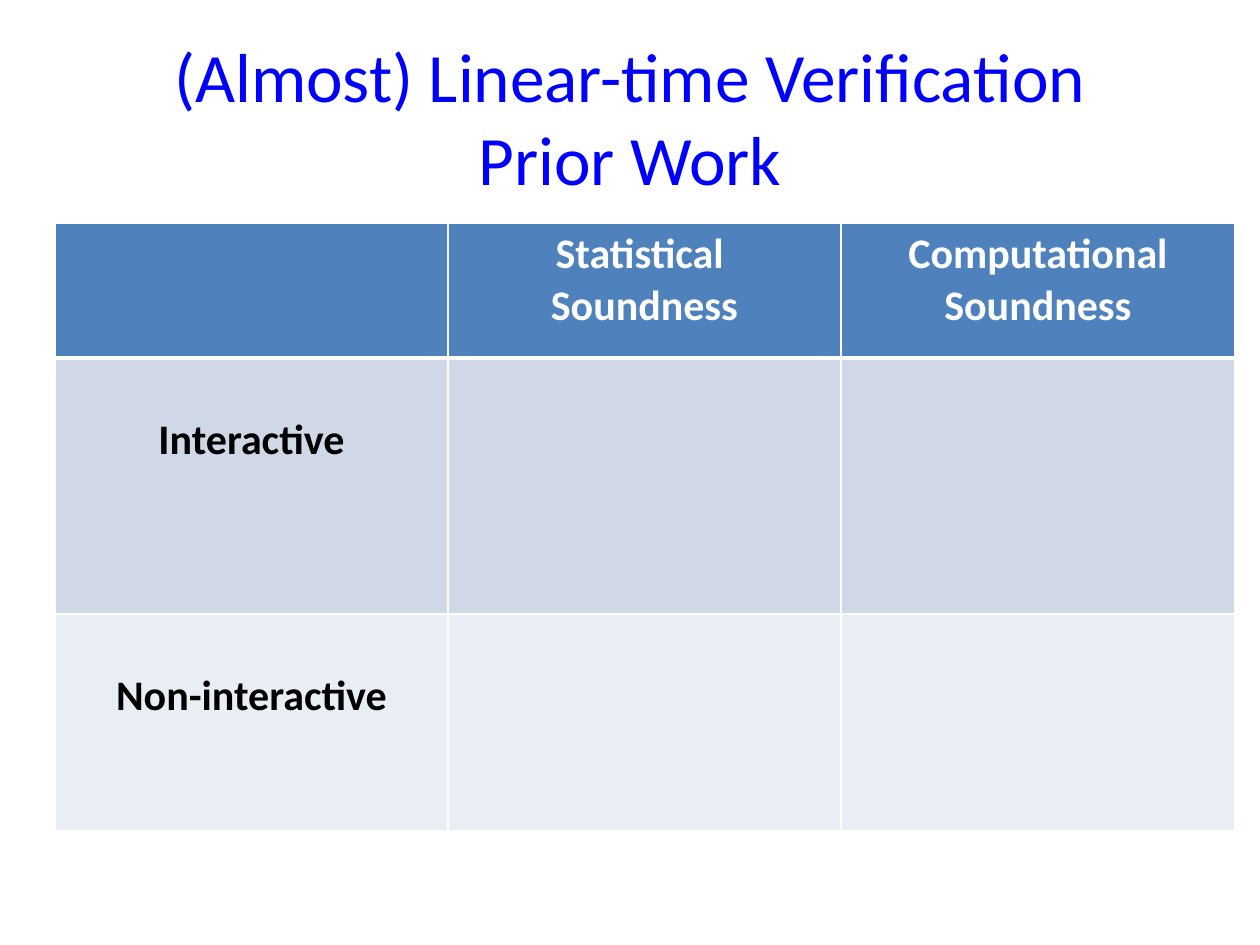
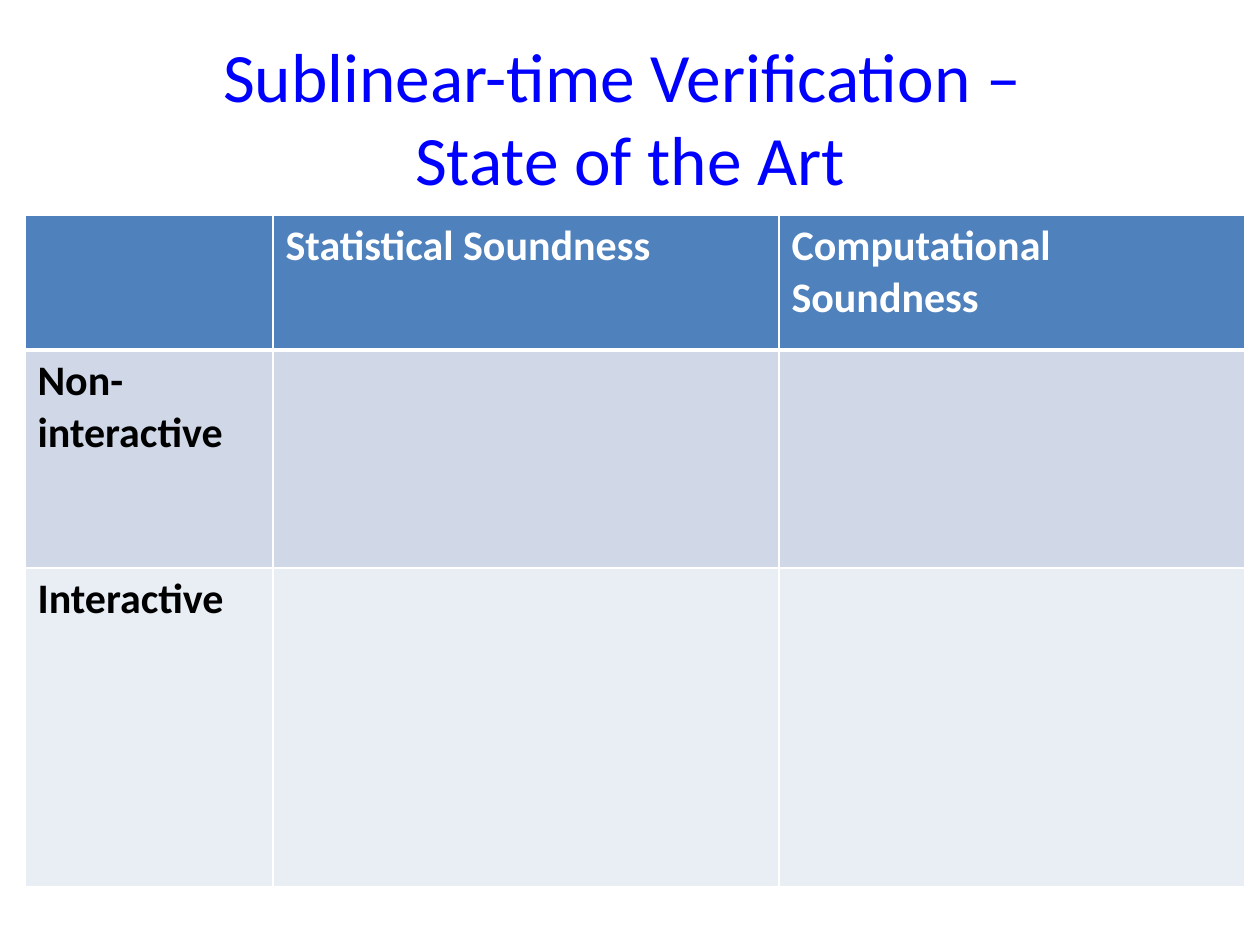
"""Build two slides that set verification settings out in soundness tables."""
from dataclasses import dataclass

from lxml import etree
from pptx import Presentation
from pptx.dml.color import RGBColor
from pptx.enum.text import MSO_ANCHOR, MSO_AUTO_SIZE, PP_ALIGN
from pptx.oxml.ns import qn
from pptx.util import Emu, Pt

CENTER, LEFT = PP_ALIGN.CENTER, PP_ALIGN.LEFT
MIDDLE = MSO_ANCHOR.MIDDLE
NO_AUTOFIT = MSO_AUTO_SIZE.NONE

PX_PER_INCH = 126
FONT = "Calibri"
TITLE_ONLY = 5
TITLE_BOX = (63, 38, 1134, 157)
CELL_MARGIN = 6
THIN, THICK = 1, 3
COLORS = {
    "title": "0000FF",
    "header": "4F81BD",
    "odd_row": "D0D8E8",
    "even_row": "E9EDF4",
    "border": "FFFFFF",
    "header_text": "FFFFFF",
    "label_text": "000000",
}
ROW_FILLS = ("header", "odd_row", "even_row")


@dataclass(frozen=True)
class SoundnessTable:
    """One slide: its title and the table of settings below it."""

    title: str
    left: int
    top: int
    columns: tuple[int, ...]
    rows: tuple[int, ...]
    headers: tuple[str, ...]
    labels: tuple[str, ...]
    align: PP_ALIGN
    label_margin: int = CELL_MARGIN


PAGES = (
    SoundnessTable(
        title="(Almost) Linear-time Verification\vPrior Work",
        left=55,
        top=223,
        columns=(393, 393, 394),
        rows=(135, 256, 217),
        headers=("Statistical \nSoundness", "Computational Soundness"),
        labels=("Interactive", "Non-interactive"),
        align=CENTER,
        label_margin=57,
    ),
    SoundnessTable(
        title="Sublinear-time Verification – \vState of the Art",
        left=25,
        top=215,
        columns=(248, 506, 466),
        rows=(135, 218, 319),
        headers=("Statistical Soundness", "Computational Soundness"),
        labels=("Non-interactive", "Interactive"),
        align=LEFT,
    ),
)


def px(length: int) -> Emu:
    """Turn a length in px into EMU."""
    return Emu(round(length * 914400 / PX_PER_INCH))


def color(name: str) -> RGBColor:
    """Look up a named colour."""
    return RGBColor.from_string(COLORS[name])


def style_text(frame, size: float, color_name: str, align: PP_ALIGN, bold: bool) -> None:
    """Set font and alignment on every paragraph of a text frame."""
    for para in frame.paragraphs:
        para.alignment = align
        para.font.name = FONT
        para.font.size = Pt(size)
        para.font.bold = bold
        para.font.color.rgb = color(color_name)


def add_title(page, text: str) -> None:
    """Place and format the title placeholder."""
    box = page.shapes.title
    box.left, box.top, box.width, box.height = map(px, TITLE_BOX)
    frame = box.text_frame
    frame.text = text
    frame.auto_size = NO_AUTOFIT
    frame.vertical_anchor = MIDDLE
    style_text(frame, 39.6, "title", CENTER, False)


def set_borders(cell, top: int, bottom: int) -> None:
    """Draw the four cell borders, with their own top and bottom widths."""
    properties = cell._tc.get_or_add_tcPr()
    widths = {"a:lnL": THIN, "a:lnR": THIN, "a:lnT": top, "a:lnB": bottom}
    for index, (tag, width) in enumerate(widths.items()):
        line = etree.Element(qn(tag), w=str(Pt(width)))
        fill = etree.SubElement(line, qn("a:solidFill"))
        etree.SubElement(fill, qn("a:srgbClr"), val=COLORS["border"])
        properties.insert(index, line)


def add_soundness_table(page, spec: SoundnessTable) -> None:
    """Draw a header row and one row for each label."""
    texts = [("", *spec.headers)]
    texts += [(label, *[""] * len(spec.headers)) for label in spec.labels]
    frame = page.shapes.add_table(
        len(spec.rows), len(spec.columns), px(spec.left), px(spec.top),
        px(sum(spec.columns)), px(sum(spec.rows)),
    )
    table = frame.table
    for column, width in zip(table.columns, spec.columns):
        column.width = px(width)
    for index, row in enumerate(table.rows):
        row.height = px(spec.rows[index])
        is_header = index == 0
        for cell, text in zip(row.cells, texts[index]):
            cell.text = text
            cell.margin_top = px(CELL_MARGIN if is_header else spec.label_margin)
            cell.fill.solid()
            cell.fill.fore_color.rgb = color(ROW_FILLS[index])
            text_color = "header_text" if is_header else "label_text"
            style_text(cell.text_frame, 24, text_color, spec.align, True)
            set_borders(cell, THICK if index == 1 else THIN, THICK if is_header else THIN)


def main() -> None:
    """Build and save the deck."""
    deck = Presentation()
    deck.slide_width, deck.slide_height = px(1260), px(945)
    for spec in PAGES:
        page = deck.slides.add_slide(deck.slide_layouts[TITLE_ONLY])
        add_title(page, spec.title)
        add_soundness_table(page, spec)
    deck.save("out.pptx")


if __name__ == "__main__":
    main()
